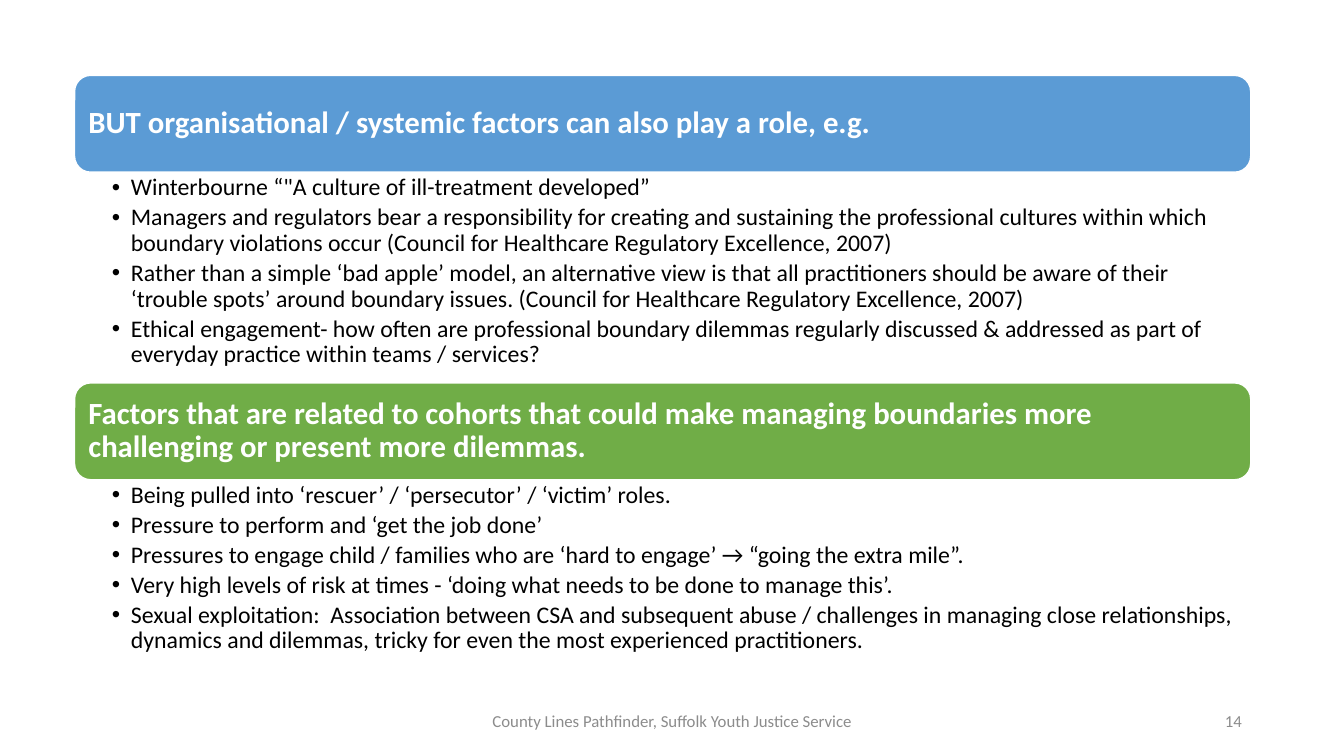
from pptx import Presentation
from pptx.dml.color import RGBColor
from pptx.enum.shapes import MSO_SHAPE
from pptx.enum.text import MSO_ANCHOR, PP_ALIGN
from pptx.oxml.ns import qn
from pptx.util import Cm, Pt
from lxml.etree import SubElement

COLORS = {
    "blue": "5B9BD5",
    "green": "70AD47",
    "white": "FFFFFF",
    "black": "000000",
    "grey": "8C8C8C",
}
FONT = "Calibri"
LEFT, WIDTH = Cm(1.88), Cm(29.64)
BAR = Cm(2.44)

PARTS = [
    ("blue", Cm(1.9), Cm(5.31),
     "BUT organisational / systemic factors can also play a role, e.g.",
     [
         "Winterbourne “\"A culture of ill-treatment developed”",
         "Managers and regulators bear a responsibility for creating and sustaining "
         "the professional cultures within which boundary violations occur "
         "(Council for Healthcare Regulatory Excellence, 2007)",
         "Rather than a simple ‘bad apple’ model, an alternative view is that all "
         "practitioners should be aware of their ‘trouble spots’ around boundary "
         "issues. (Council for Healthcare Regulatory Excellence, 2007)",
         "Ethical engagement- how often are professional boundary dilemmas regularly "
         "discussed & addressed as part of everyday practice within teams / services?",
     ]),
    ("green", Cm(9.65), Cm(4.8),
     "Factors that are related to cohorts that could make managing boundaries more "
     "challenging or present more dilemmas.",
     [
         "Being pulled into ‘rescuer’ / ‘persecutor’ / ‘victim’ roles.",
         "Pressure to perform and ‘get the job done’",
         "Pressures to engage child / families who are ‘hard to engage’ → "
         "“going the extra mile”.",
         "Very high levels of risk at times - ‘doing what needs to be done to "
         "manage this’.",
         "Sexual exploitation:  Association between CSA and subsequent abuse / "
         "challenges in managing close relationships, dynamics and dilemmas, tricky "
         "for even the most experienced practitioners.",
     ]),
]


def paint(color):
    return RGBColor.from_string(COLORS[color])


def style(line, size, color, bold=False, align=PP_ALIGN.LEFT):
    line.alignment = align
    for run in line.runs:
        run.font.name = FONT
        run.font.size = Pt(size)
        run.font.bold = bold
        run.font.color.rgb = paint(color)


def set_frame(frame, left, top, right, base, anchor):
    frame.word_wrap = True
    frame.vertical_anchor = anchor
    frame.margin_left, frame.margin_top = left, top
    frame.margin_right, frame.margin_bottom = right, base


def add_bar(slide, top, color, text):
    bar = slide.shapes.add_shape(MSO_SHAPE.ROUNDED_RECTANGLE, LEFT, top, WIDTH, BAR)
    bar.shadow.inherit = False
    bar.fill.solid()
    bar.fill.fore_color.rgb = paint(color)
    bar.line.color.rgb = paint("white")
    bar.line.width = Pt(1)
    pad = Cm(0.23)
    set_frame(bar.text_frame, pad, pad, pad, pad, MSO_ANCHOR.MIDDLE)
    bar.text_frame.text = text
    line = bar.text_frame.paragraphs[0]
    line.line_spacing = 0.9
    style(line, 22, "white", bold=True)


def add_bullet(line):
    props = line._p.get_or_add_pPr()
    props.set("marL", str(Cm(0.48)))
    props.set("indent", str(Cm(-0.48)))
    SubElement(props, qn("a:buFont"), typeface="Arial")
    SubElement(props, qn("a:buChar"), char="•")


def add_list(slide, top, height, items):
    frame = slide.shapes.add_textbox(LEFT, top, WIDTH, height).text_frame
    set_frame(frame, Cm(0.94), Cm(0.08), Cm(0.43), Cm(0.08), MSO_ANCHOR.TOP)
    frame.text = "\n".join(items)
    for line in frame.paragraphs:
        line.line_spacing = 0.9
        line.space_after = Pt(3)
        style(line, 17, "black")
        add_bullet(line)


def add_foot(slide, left, width, text, align):
    frame = slide.shapes.add_textbox(left, Cm(17.65), width, Cm(1.02)).text_frame
    set_frame(frame, Cm(0.25), Cm(0.13), Cm(0.25), Cm(0.13), MSO_ANCHOR.MIDDLE)
    frame.text = text
    line = frame.paragraphs[0]
    line.space_after = Pt(6)
    style(line, 12, "grey", align=align)


def main():
    deck = Presentation()
    deck.slide_width, deck.slide_height = Cm(33.87), Cm(19.05)
    slide = deck.slides.add_slide(deck.slide_layouts[6])
    for color, top, height, title, items in PARTS:
        add_bar(slide, top, color, title)
        add_list(slide, top + BAR, height, items)
    add_foot(slide, Cm(11.23), Cm(11.43),
             "County Lines Pathfinder, Suffolk Youth Justice Service", PP_ALIGN.CENTER)
    add_foot(slide, Cm(23.93), Cm(7.62), "14", PP_ALIGN.RIGHT)
    deck.save("out.pptx")


if __name__ == "__main__":
    main()
